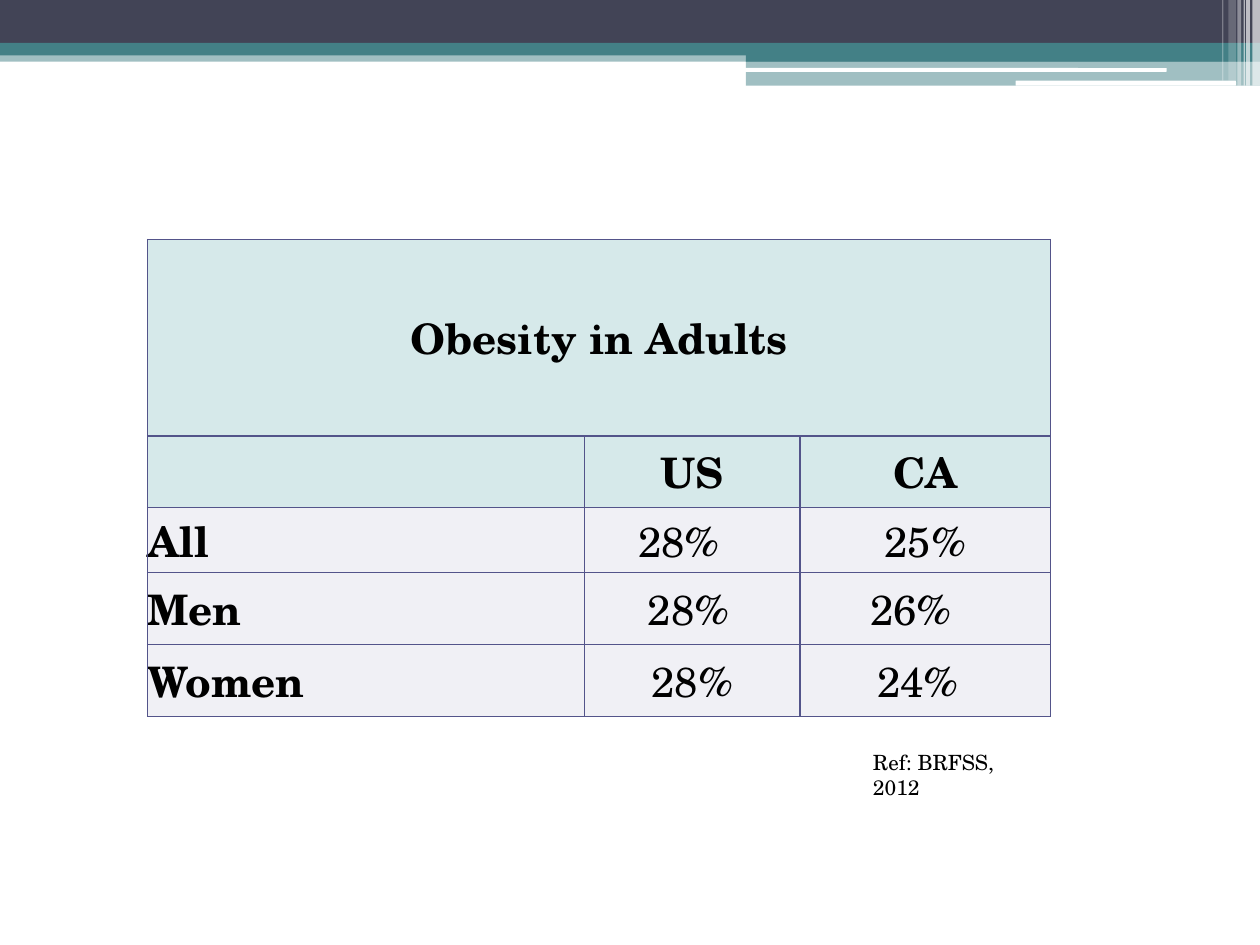
from lxml import etree
from pptx import Presentation
from pptx.dml.color import RGBColor
from pptx.enum.shapes import MSO_SHAPE
from pptx.enum.text import MSO_ANCHOR, PP_ALIGN
from pptx.oxml.ns import qn
from pptx.util import Inches, Pt

RECTANGLE = MSO_SHAPE.RECTANGLE
ROUNDED = MSO_SHAPE.ROUNDED_RECTANGLE
LEFT, CENTER = PP_ALIGN.LEFT, PP_ALIGN.CENTER
MIDDLE = MSO_ANCHOR.MIDDLE

FONT = "TeX Gyre Schola"
COLORS = {
    "navy": "424456",
    "teal": "438086",
    "white": "FFFFFF",
    "text": "000000",
    "border": "53548A",
    "header": "D6E9EA",
    "body": "F0F0F5",
}


def write_text(frame, text, size=24, bold=False, align=LEFT):
    paragraph = frame.paragraphs[0]
    paragraph.alignment = align
    run = paragraph.add_run()
    run.text = text
    run.font.name = FONT
    run.font.size = Pt(size)
    run.font.bold = bold
    run.font.color.rgb = RGBColor.from_string(COLORS["text"])


def add_borders(cell):
    """Draw the same thin line on all four sides of a table cell."""
    properties = cell._tc.get_or_add_tcPr()
    for position, side in enumerate(("lnL", "lnR", "lnT", "lnB")):
        line = etree.Element(qn(f"a:{side}"), w=str(Pt(0.75)))
        fill = etree.SubElement(line, qn("a:solidFill"))
        etree.SubElement(fill, qn("a:srgbClr"), val=COLORS["border"])
        properties.insert(position, line)


presentation = Presentation()
presentation.slide_width = Inches(10)
presentation.slide_height = Inches(7.5)
slide = presentation.slides.add_slide(presentation.slide_layouts[6])

# Header bands and the stripes at the right: kind, place, color, opacity in %
decorations = [
    (RECTANGLE, (0, 0.4, 10, 0.09), "teal", 50),
    (RECTANGLE, (0, 0, 10, 0.34), "navy", 100),
    (RECTANGLE, (0, 0.34, 10, 0.1), "teal", 100),
    (RECTANGLE, (5.92, 0.39, 4.08, 0.1), "teal", 100),
    (RECTANGLE, (5.92, 0.48, 4.08, 0.2), "teal", 50),
    (ROUNDED, (5.91, 0.54, 3.35, 0.03), "white", 100),
    (ROUNDED, (8.06, 0.64, 1.75, 0.04), "white", 100),
]
stripes = [
    (9.94, 0.06, 0.68, 65),
    (9.89, 0.03, 0.68, 65),
    (9.87, 0.01, 0.68, 60),
    (9.82, 0.03, 0.68, 40),
    (9.75, 0.06, 0.64, 20),
    (9.7, 0.01, 0.64, 30),
]
for left, width, height, opacity in stripes:
    decorations.append((RECTANGLE, (left, 0, width, height), "white", opacity))

for kind, place, color, opacity in decorations:
    shape = slide.shapes.add_shape(kind, *map(Inches, place))
    shape.shadow.inherit = False
    shape.line.fill.background()
    shape.fill.solid()
    shape.fill.fore_color.rgb = RGBColor.from_string(COLORS[color])
    if opacity < 100:
        color_element = shape._element.spPr.find(".//" + qn("a:srgbClr"))
        etree.SubElement(color_element, qn("a:alpha"), val=str(opacity * 1000))

# Obesity table
rows = [
    ("Obesity in Adults", "", ""),
    ("", "US", "CA"),
    ("All", "28%", "25%"),
    ("Men", "28%", "26%"),
    ("Women", "28%", "24%"),
]
column_widths = [3.47, 1.71, 1.99]
row_heights = [1.56, 0.57, 0.47, 0.57, 0.57]
# Right margins that shift centered values to the left, by (row, column)
right_margins = {(2, 1): 0.21, (3, 1): 0.06, (3, 2): 0.23, (4, 2): 0.12}

table = slide.shapes.add_table(
    len(rows), len(column_widths), Inches(1.17), Inches(1.9),
    Inches(sum(column_widths)), Inches(sum(row_heights)),
).table
for column, width in zip(table.columns, column_widths):
    column.width = Inches(width)
for row, height in zip(table.rows, row_heights):
    row.height = Inches(height)
table.cell(0, 0).merge(table.cell(0, 2))

for row_index, values in enumerate(rows):
    is_header = row_index < 2
    for column_index, value in enumerate(values):
        cell = table.cell(row_index, column_index)
        cell.margin_left = cell.margin_top = cell.margin_bottom = 0
        cell.margin_right = Inches(right_margins.get((row_index, column_index), 0))
        cell.vertical_anchor = MIDDLE
        cell.fill.solid()
        cell.fill.fore_color.rgb = RGBColor.from_string(
            COLORS["header" if is_header else "body"])
        add_borders(cell)
        if value:
            is_label = column_index == 0 and not is_header
            write_text(cell.text_frame, value, bold=is_header or is_label,
                       align=LEFT if is_label else CENTER)

# Reference
reference = slide.shapes.add_textbox(
    Inches(6.83), Inches(5.9), Inches(1.52), Inches(0.3))
reference.text_frame.word_wrap = True
write_text(reference.text_frame, "Ref: BRFSS, 2012", size=12)

presentation.save("out.pptx")
